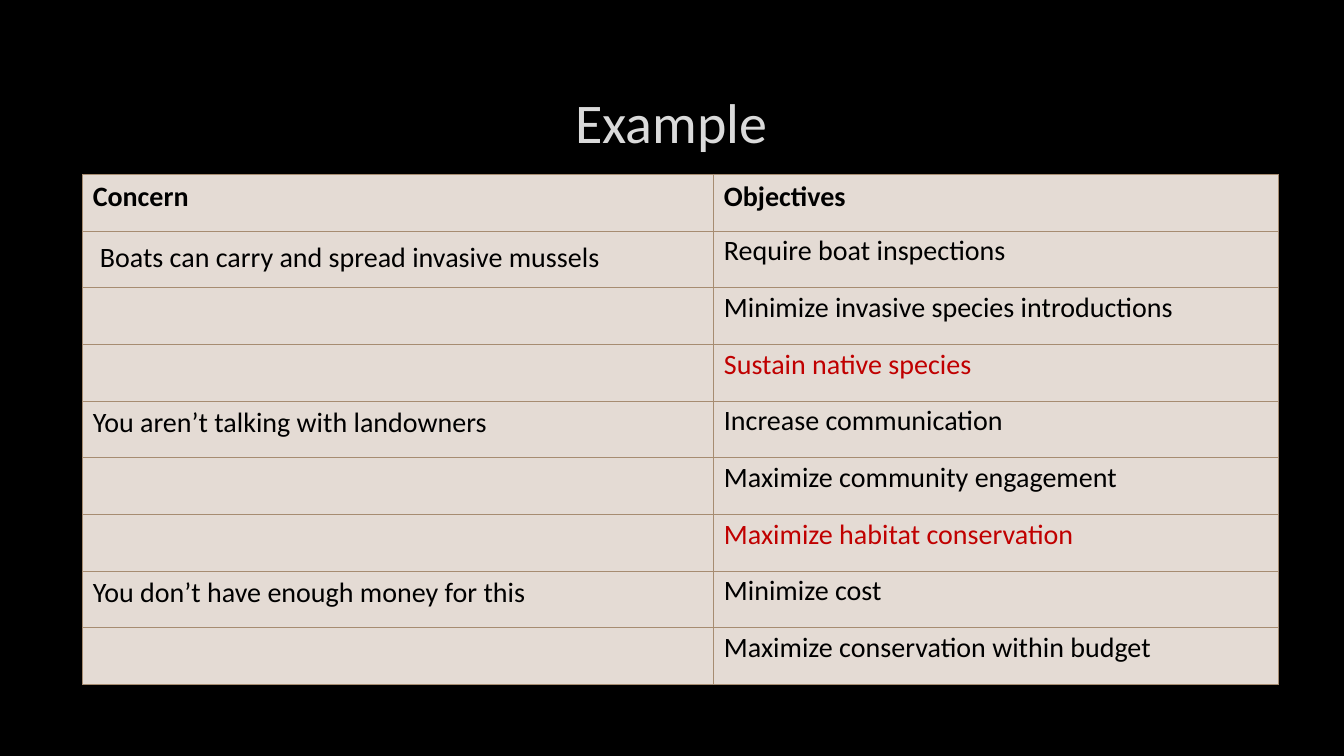
import pptx
import pptx.util
import pptx.dml.color
import pptx.enum.text
import pptx.oxml
from dataclasses import dataclass

Inches, Pt = pptx.util.Inches, pptx.util.Pt
NS = 'xmlns:a="http://schemas.openxmlformats.org/drawingml/2006/main"'


@dataclass(frozen=True)
class Theme:
    font: str = "Calibri"
    title_size: int = 40
    body_size: int = 20
    background: str = "000000"
    title: str = "DADADA"
    outline: str = "404040"
    text: str = "000000"
    accent: str = "C00000"
    cell: str = "E4DBD4"
    border: str = "A68C71"


THEME = Theme()
WIDTH, HEIGHT = 13.33, 7.5
COLUMNS = (6.26, 5.6)
ROW = 0.5625

# Each concern leads to objectives; the highlighted ones are fundamental
HEADINGS = ("Concern", "Objectives")
CONCERNS = {
    "Boats can carry and spread invasive mussels": (
        "Require boat inspections",
        "Minimize invasive species introductions",
        "Sustain native species"),
    "You aren’t talking with landowners": (
        "Increase communication",
        "Maximize community engagement",
        "Maximize habitat conservation"),
    "You don’t have enough money for this": (
        "Minimize cost",
        "Maximize conservation within budget"),
}
HIGHLIGHTED = {"Sustain native species", "Maximize habitat conservation"}


def rgb(color):
    return pptx.dml.color.RGBColor.from_string(color)


def style_font(font, size, color, bold=False):
    font.name, font.size, font.bold = THEME.font, Pt(size), bold
    font.color.rgb = rgb(color)


def add_title(s, text):
    sp = s.shapes.title
    sp.left, sp.top = Inches(1), Inches(0.67)
    sp.width, sp.height = Inches(11.32), Inches(1.06)
    tf = sp.text_frame
    tf.text = text
    tf.vertical_anchor = pptx.enum.text.MSO_ANCHOR.MIDDLE
    p = tf.paragraphs[0]
    p.alignment = pptx.enum.text.PP_ALIGN.CENTER
    style_font(p.font, THEME.title_size, THEME.title)
    # Faint letter outline
    p.runs[0].font._element.insert(0, pptx.oxml.parse_xml(
        f'<a:ln {NS} w="9525"><a:solidFill><a:srgbClr val="{THEME.outline}">'
        '<a:alpha val="10000"/></a:srgbClr></a:solidFill></a:ln>'))


def style_cell(cell):
    # Borders come before the fill in the cell properties
    tc_pr = cell._tc.get_or_add_tcPr()
    for side in ("lnL", "lnR", "lnT", "lnB"):
        tc_pr.append(pptx.oxml.parse_xml(
            f'<a:{side} {NS} w="9525"><a:solidFill>'
            f'<a:srgbClr val="{THEME.border}"/></a:solidFill></a:{side}>'))
    cell.fill.solid()
    cell.fill.fore_color.rgb = rgb(THEME.cell)


def write_cell(cell, text, bold=False, spacing=None):
    p = cell.text_frame.paragraphs[0]
    p.text = text
    p.line_spacing = spacing
    color = THEME.accent if text in HIGHLIGHTED else THEME.text
    style_font(p.font, THEME.body_size, color, bold)
    return p


def add_concern_table(s):
    count = 1 + sum(map(len, CONCERNS.values()))
    table = s.shapes.add_table(
        count, len(COLUMNS), Inches(0.82), Inches(1.73),
        Inches(sum(COLUMNS)), Inches(count * ROW)).table
    for column, width in zip(table.columns, COLUMNS):
        column.width = Inches(width)
    for row in table.rows:
        row.height = Inches(ROW)
    for cell in table.iter_cells():
        style_cell(cell)

    # Header row
    for col, heading in enumerate(HEADINGS):
        write_cell(table.cell(0, col), heading, bold=True)

    # Concern beside the first of its objectives
    row = 1
    for concern, objectives in CONCERNS.items():
        p = write_cell(table.cell(row, 0), concern)
        if row == 1:
            p.line_spacing = 1.15
            p._p.get_or_add_pPr().set("marL", str(Inches(0.07)))
        for objective in objectives:
            write_cell(table.cell(row, 1), objective, spacing=0.9)
            row += 1


def main():
    prs = pptx.Presentation()
    prs.slide_width, prs.slide_height = Inches(WIDTH), Inches(HEIGHT)
    s = prs.slides.add_slide(prs.slide_layouts[5])
    s.background.fill.solid()
    s.background.fill.fore_color.rgb = rgb(THEME.background)
    add_title(s, "Example")
    add_concern_table(s)
    prs.save("out.pptx")


if __name__ == "__main__":
    main()
